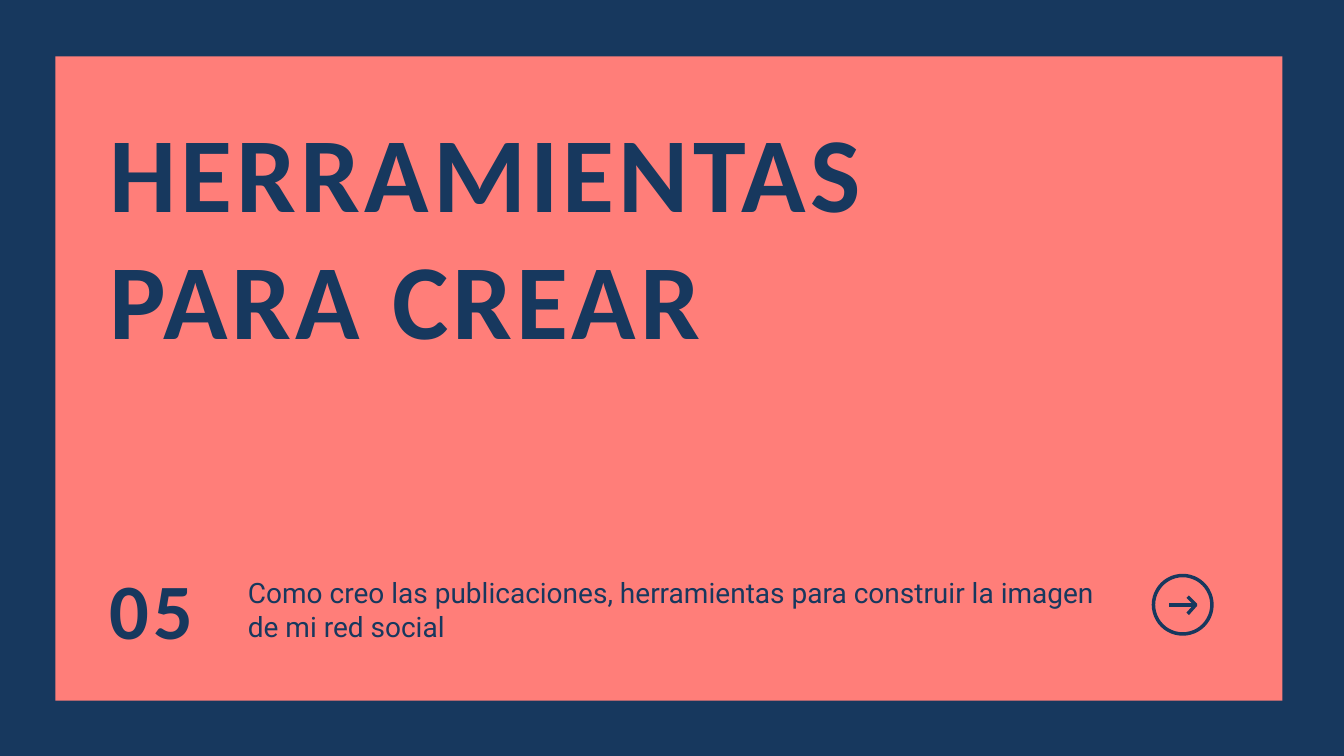
from dataclasses import dataclass

from lxml.etree import SubElement
from pptx import Presentation
from pptx.dml.color import RGBColor
from pptx.enum.shapes import MSO_SHAPE
from pptx.enum.text import MSO_ANCHOR
from pptx.oxml.ns import qn
from pptx.shapes.autoshape import Shape
from pptx.slide import Slide
from pptx.util import Inches, Pt

NAVY = "17385E"
CORAL = "FF7E79"
ICON_LINE = 2.5


@dataclass
class TextBlock:
    left: float
    top: float
    width: float
    height: float
    lines: list[str]
    size: float
    font: str
    bold: bool = False
    spacing: float = 0
    anchor: MSO_ANCHOR = MSO_ANCHOR.TOP


TEXT_BLOCKS = [
    TextBlock(0.99, 1.23, 10.78, 2.17, ["HERRAMIENTAS", "PARA CREAR"],
              76, "Calibri", True, 3, MSO_ANCHOR.MIDDLE),
    TextBlock(0.99, 5.78, 9.04, 0.5, ["05"],
              56, "Calibri", True, 3, MSO_ANCHOR.MIDDLE),
    TextBlock(2.36, 5.66, 8.81, 0.77,
              ["Como creo las publicaciones, herramientas para construir "
               "la imagen de mi red social"], 20, "Roboto"),
]

# Open strokes of the arrow: head, then shaft
ARROW_STROKES = [
    [(11.78, 5.92), (11.86, 6), (11.78, 6.09)],
    [(11.85, 6), (11.59, 6)],
]


def color(value: str) -> RGBColor:
    return RGBColor.from_string(value)


def outline(shape: Shape) -> None:
    shape.shadow.inherit = False
    shape.fill.background()
    shape.line.color.rgb = color(NAVY)
    shape.line.width = Pt(ICON_LINE)


def add_text(page: Slide, block: TextBlock) -> None:
    box = page.shapes.add_textbox(Inches(block.left), Inches(block.top),
                                  Inches(block.width), Inches(block.height))
    frame = box.text_frame
    frame.word_wrap = True
    frame.vertical_anchor = block.anchor
    for index, line in enumerate(block.lines):
        para = frame.add_paragraph() if index else frame.paragraphs[0]
        span = para.add_run()
        span.text = line
        span.font.size = Pt(block.size)
        span.font.bold = block.bold
        span.font.color.rgb = color(NAVY)
        span.font.name = block.font
        if block.spacing:
            properties = span.font._element
            properties.set("spc", str(int(block.spacing * 100)))


def add_stroke(page: Slide, points: list[tuple[float, float]]) -> None:
    start, *rest = [(Inches(x), Inches(y)) for x, y in points]
    builder = page.shapes.build_freeform(*start)
    builder.add_line_segments(rest, close=False)
    outline(builder.convert_to_shape())


def main() -> None:
    deck = Presentation()
    deck.slide_width, deck.slide_height = Inches(13.33), Inches(7.5)
    page = deck.slides.add_slide(deck.slide_layouts[6])

    # Navy frame around a coral panel
    page.background.fill.solid()
    page.background.fill.fore_color.rgb = color(NAVY)
    panel = page.shapes.add_shape(MSO_SHAPE.RECTANGLE, Inches(0.55),
                                  Inches(0.56), Inches(12.17), Inches(6.39))
    panel.shadow.inherit = False
    panel.fill.solid()
    panel.fill.fore_color.rgb = color(CORAL)
    panel.line.fill.background()

    # Title, section number and description
    for block in TEXT_BLOCKS:
        add_text(page, block)

    # Arrow in a circle
    for points in ARROW_STROKES:
        add_stroke(page, points)
    circle = page.shapes.add_shape(MSO_SHAPE.OVAL, Inches(11.44), Inches(5.71),
                                   Inches(0.58), Inches(0.58))
    outline(circle)

    deck.save("out.pptx")


if __name__ == "__main__":
    main()
